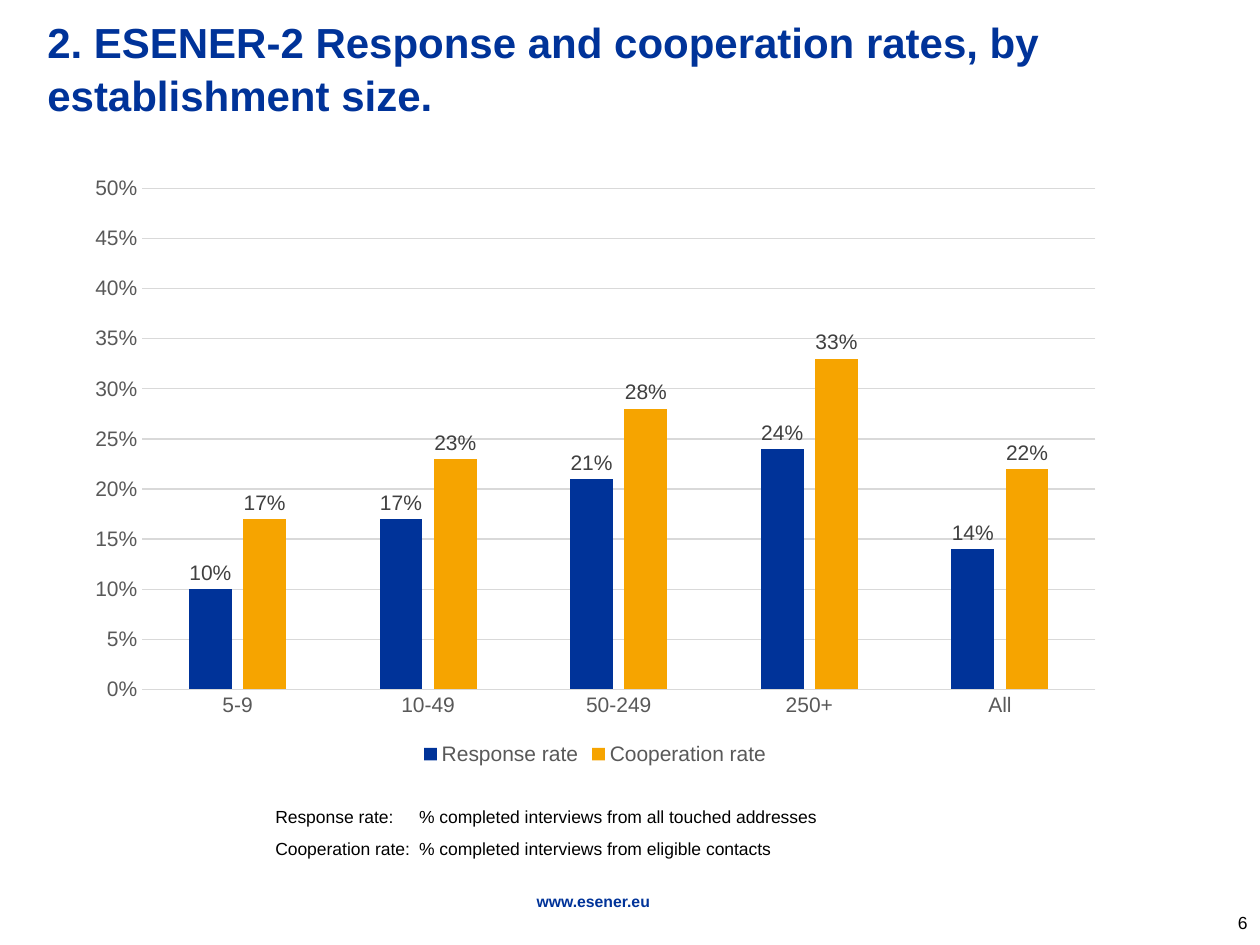
from dataclasses import dataclass

from lxml.etree import SubElement
from pptx import Presentation
from pptx.chart.data import CategoryChartData
from pptx.dml.color import RGBColor
from pptx.enum.chart import XL_CHART_TYPE, XL_LABEL_POSITION, XL_LEGEND_POSITION, XL_TICK_MARK
from pptx.enum.text import MSO_ANCHOR, PP_ALIGN
from pptx.oxml.ns import qn
from pptx.util import Cm, Pt


@dataclass(frozen=True)
class Theme:
    font: str = "Arial"
    blue: str = "003399"
    orange: str = "F6A400"
    black: str = "000000"
    axis_text: str = "595959"
    label_text: str = "404040"
    grid: str = "D9D9D9"
    title_size: int = 24
    chart_size: int = 12
    note_size: int = 10
    footer_size: int = 9


class SlideBuilder:
    def __init__(self, presentation, theme):
        self.theme = theme
        self.slide = presentation.slides.add_slide(presentation.slide_layouts[5])

    def style_font(self, font, size, color, bold=False):
        font.name = self.theme.font
        font.size = Pt(size)
        font.bold = bold
        font.color.rgb = RGBColor.from_string(color)

    def style_line(self, line):
        line.color.rgb = RGBColor.from_string(self.theme.grid)
        line.width = Pt(0.75)

    def add_title(self, text, left, top, width, height):
        title = self.slide.shapes.title
        title.left, title.top, title.width, title.height = left, top, width, height
        text_frame = title.text_frame
        text_frame.text = text
        text_frame.vertical_anchor = MSO_ANCHOR.MIDDLE
        paragraph = text_frame.paragraphs[0]
        paragraph.alignment = PP_ALIGN.LEFT
        paragraph.line_spacing = 1.05
        self.style_font(paragraph.runs[0].font, self.theme.title_size, self.theme.blue, True)

    def add_text(self, text, left, top, width, height, size, color, bold=False,
                 alignment=PP_ALIGN.LEFT, anchor=MSO_ANCHOR.TOP, margin=None):
        text_frame = self.slide.shapes.add_textbox(left, top, width, height).text_frame
        text_frame.word_wrap = True
        text_frame.vertical_anchor = anchor
        if margin is not None:
            text_frame.margin_left = text_frame.margin_right = margin
            text_frame.margin_top = text_frame.margin_bottom = margin
        text_frame.text = text
        for paragraph in text_frame.paragraphs:
            paragraph.alignment = alignment
            for run in paragraph.runs:
                self.style_font(run.font, size, color, bold)
        return text_frame

    def add_definitions(self, definitions, left, top, width, height, tab_position):
        """Terms and their meanings, aligned at a tab stop."""
        text = "\n".join(f"{term}:\t{meaning}" for term, meaning in definitions)
        text_frame = self.add_text(text, left, top, width, height,
                                   self.theme.note_size, self.theme.black)
        for index, paragraph in enumerate(text_frame.paragraphs):
            if index:
                paragraph.space_before = Pt(6)
            tab_list = SubElement(paragraph._p.get_or_add_pPr(), qn("a:tabLst"))
            SubElement(tab_list, qn("a:tab"), pos=str(tab_position), algn="l")

    def add_column_chart(self, categories, series_values, left, top, width, height):
        theme = self.theme
        data = CategoryChartData(number_format="0%")
        data.categories = categories
        for name, values in series_values.items():
            data.add_series(name, values)
        chart = self.slide.shapes.add_chart(
            XL_CHART_TYPE.COLUMN_CLUSTERED, left, top, width, height, data).chart
        chart.has_title = False
        self.style_font(chart.font, theme.chart_size, theme.black)

        plot = chart.plots[0]
        plot.vary_by_categories = False
        plot.gap_width = 219
        plot.overlap = -27
        for series, color in zip(plot.series, (theme.blue, theme.orange)):
            series.format.fill.solid()
            series.format.fill.fore_color.rgb = RGBColor.from_string(color)
            labels = series.data_labels
            labels.show_value = True
            labels.position = XL_LABEL_POSITION.OUTSIDE_END
            labels.number_format = "0%"
            labels.number_format_is_linked = False
            self.style_font(labels.font, theme.chart_size, theme.label_text)

        for axis in (chart.category_axis, chart.value_axis):
            axis.major_tick_mark = axis.minor_tick_mark = XL_TICK_MARK.NONE
            self.style_font(axis.tick_labels.font, theme.chart_size, theme.axis_text)
        self.style_line(chart.category_axis.format.line)

        value_axis = chart.value_axis
        value_axis.minimum_scale = 0
        value_axis.maximum_scale = 0.5
        value_axis.major_unit = 0.05
        value_axis.tick_labels.number_format = "0%"
        value_axis.tick_labels.number_format_is_linked = False
        value_axis.format.line.fill.background()
        self.style_line(value_axis.major_gridlines.format.line)

        chart.has_legend = True
        chart.legend.position = XL_LEGEND_POSITION.BOTTOM
        chart.legend.include_in_layout = False
        self.style_font(chart.legend.font, theme.chart_size, theme.axis_text)


def main():
    presentation = Presentation()
    presentation.slide_width, presentation.slide_height = Cm(25.4), Cm(19.05)
    theme = Theme()
    builder = SlideBuilder(presentation, theme)

    builder.add_title("2. ESENER-2 Response and cooperation rates, by establishment size.",
                      Cm(0.7), Cm(0.33), Cm(23.4), Cm(2.03))
    builder.add_column_chart(
        ["5-9", "10-49", "50-249", "250+", "All"],
        {"Response rate": [0.10, 0.17, 0.21, 0.24, 0.14],
         "Cooperation rate": [0.17, 0.23, 0.28, 0.33, 0.22]},
        Cm(1.5), Cm(3.33), Cm(21), Cm(12.2))
    builder.add_definitions(
        [("Response rate", "% completed interviews from all touched addresses"),
         ("Cooperation rate", "% completed interviews from eligible contacts")],
        Cm(5.3), Cm(16.13), Cm(14.2), Cm(1.55), tab_position=Cm(2.9))
    builder.add_text("www.esener.eu", Cm(3.86), Cm(17.98), Cm(16.2), Cm(0.28),
                     theme.footer_size, theme.blue, bold=True,
                     alignment=PP_ALIGN.CENTER, margin=0)
    builder.add_text("6", Cm(23.7), Cm(18.08), Cm(1.7), Cm(1.02),
                     theme.note_size, theme.black,
                     alignment=PP_ALIGN.RIGHT, anchor=MSO_ANCHOR.MIDDLE)
    presentation.save("out.pptx")


if __name__ == "__main__":
    main()
